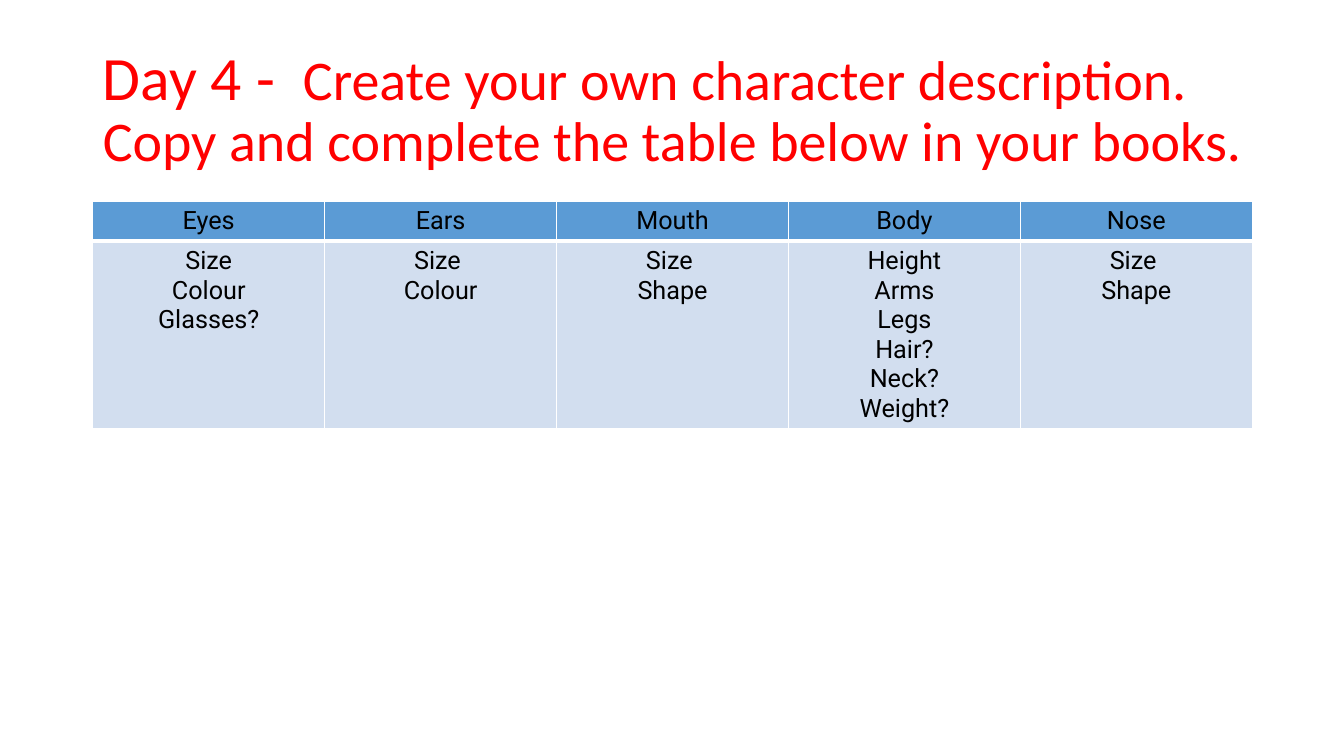
from dataclasses import dataclass

from lxml import etree
from pptx import Presentation
from pptx.dml.color import RGBColor
from pptx.enum.text import MSO_ANCHOR, MSO_AUTO_SIZE, PP_ALIGN
from pptx.oxml.ns import qn
from pptx.util import Emu, Pt

LEFT, CENTER = PP_ALIGN.LEFT, PP_ALIGN.CENTER
MIDDLE = MSO_ANCHOR.MIDDLE
NO_FIT = MSO_AUTO_SIZE.NONE
TITLE_ONLY = 5
COLORS = {"title": "FF0000", "text": "000000", "head": "5B9BD5",
          "body": "D2DEEF", "edge": "FFFFFF"}


@dataclass(frozen=True)
class Column:
    head: str
    lines: tuple[str, ...]


COLUMNS = [
    Column("Eyes", ("Size", "Colour", "Glasses?")),
    Column("Ears", ("Size ", "Colour")),
    Column("Mouth", ("Size ", "Shape")),
    Column("Body", ("Height", "Arms", "Legs", "Hair?", "Neck?", "Weight?")),
    Column("Nose", ("Size ", "Shape")),
]


def px(count: int) -> Emu:
    """Scale: 100 px to the inch."""
    return Emu(count * 9144)


def add_text(para, text: str, *, size: int, font: str, color: str,
             align=LEFT) -> None:
    para.alignment = align
    run = para.add_run()
    run.text = text
    run.font.size = Pt(size)
    run.font.name = font
    run.font.bold = False
    run.font.color.rgb = RGBColor.from_string(COLORS[color])


def set_edges(cell, top: int, bottom: int) -> None:
    """Draw the cell borders, with widths in points."""
    props = cell._tc.get_or_add_tcPr()
    widths = {"lnL": 1, "lnR": 1, "lnT": top, "lnB": bottom}
    for spot, (tag, width) in enumerate(widths.items()):
        line = etree.Element(qn(f"a:{tag}"), w=str(Pt(width)))
        fill = etree.SubElement(line, qn("a:solidFill"))
        etree.SubElement(fill, qn("a:srgbClr"), val=COLORS["edge"])
        props.insert(spot, line)


def fill_cell(cell, lines: tuple[str, ...], color: str,
              top: int, bottom: int) -> None:
    cell.fill.solid()
    cell.fill.fore_color.rgb = RGBColor.from_string(COLORS[color])
    set_edges(cell, top, bottom)
    frame = cell.text_frame
    for spot, line in enumerate(lines):
        para = frame.add_paragraph() if spot else frame.paragraphs[0]
        add_text(para, line, size=18, font="Roboto", color="text",
                 align=CENTER)


def add_title(slide) -> None:
    title = slide.shapes.title
    title.left, title.top = px(92), px(37)
    title.width, title.height = px(1150), px(145)
    frame = title.text_frame
    frame.word_wrap = True
    frame.auto_size = NO_FIT
    frame.vertical_anchor = MIDDLE
    para = frame.paragraphs[0]
    para.line_spacing = 0.9
    add_text(para, "Day 4 -  ", size=44, font="Calibri", color="title")
    add_text(para, "Create your own character description. "
             "Copy and complete the table below in your books.",
             size=40, font="Calibri", color="title")


def add_grid(slide) -> None:
    table = slide.shapes.add_table(2, len(COLUMNS), px(92), px(200),
                                   px(1150), px(225)).table
    table.rows[0].height, table.rows[1].height = px(39), px(186)
    for spot, col in enumerate(COLUMNS):
        fill_cell(table.cell(0, spot), (col.head,), "head", 1, 3)
        fill_cell(table.cell(1, spot), col.lines, "body", 3, 1)


def main() -> None:
    deck = Presentation()
    deck.slide_width, deck.slide_height = px(1333), px(750)
    slide = deck.slides.add_slide(deck.slide_layouts[TITLE_ONLY])
    add_title(slide)
    add_grid(slide)
    deck.save("out.pptx")


if __name__ == "__main__":
    main()
